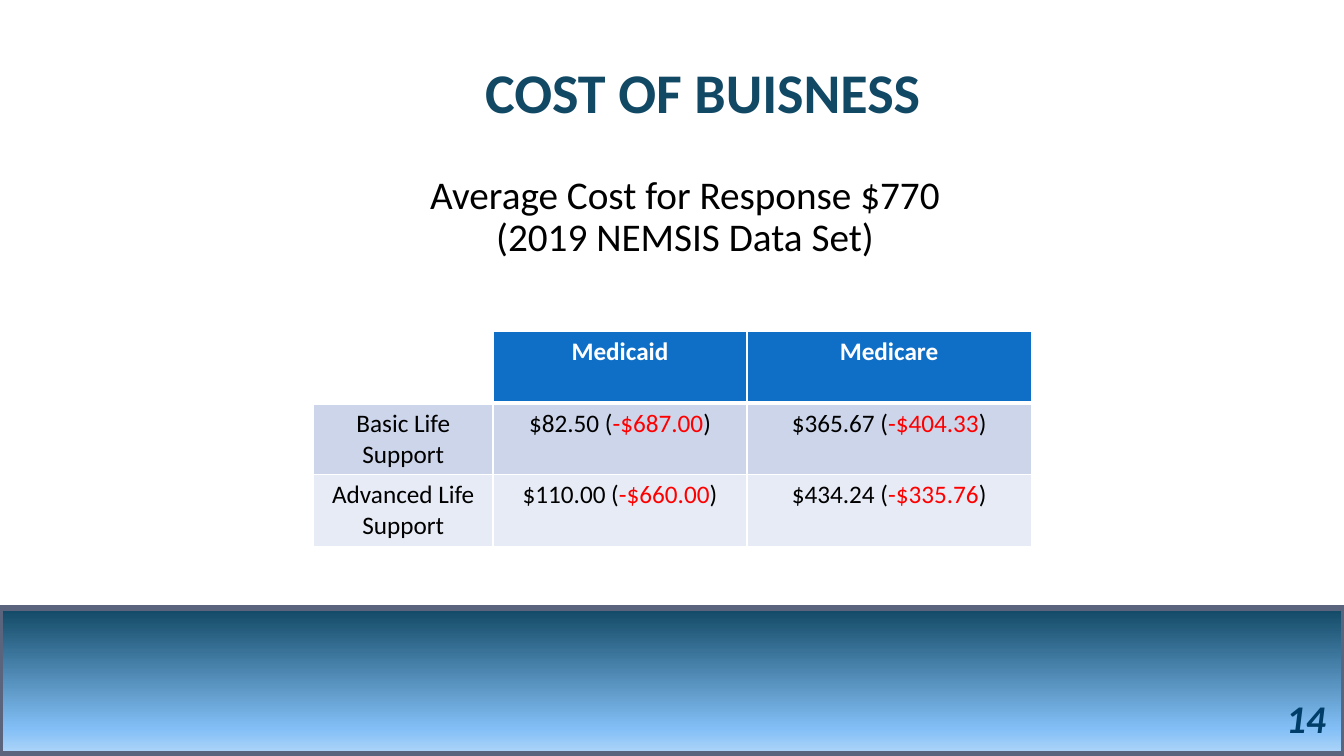
import pptx
import pptx.util
import pptx.dml.color
import pptx.enum.shapes
import pptx.enum.text
import pptx.oxml
import pptx.oxml.ns

RGB = pptx.dml.color.RGBColor
WHITE = RGB(0xFF, 0xFF, 0xFF)
BLACK = RGB(0, 0, 0)
RED = RGB(0xFF, 0, 0)
NAVY = RGB(0x11, 0x48, 0x64)
NUMBER_BLUE = RGB(0, 0x3D, 0x68)
HEADER_BLUE = RGB(0x0F, 0x6F, 0xC6)
BAND_EDGE = RGB(0x5A, 0x64, 0x7C)
SKY = RGB(0x83, 0xBF, 0xF6)
PALE_SKY = RGB(0xAC, 0xD4, 0xF9)
ROW_FILLS = [RGB(0xCC, 0xD5, 0xEA), RGB(0xE7, 0xEB, 0xF5)]

FONT = "Calibri"
SLIDE_WIDTH = pptx.util.Inches(13.333)
SLIDE_HEIGHT = pptx.util.Inches(7.5)
ALIGN = pptx.enum.text.PP_ALIGN
ANCHOR = pptx.enum.text.MSO_ANCHOR

BAND_STOPS = [(0, NAVY), (83, SKY), (99, PALE_SKY), (100, SKY)]
COLUMN_SHARES = [25, 35.4, 39.6]
HEADERS = ["", "Medicaid", "Medicare"]
COSTS = [
    ("Basic Life Support", ("$82.50", "-$687.00"), ("$365.67", "-$404.33")),
    ("Advanced Life Support", ("$110.00", "-$660.00"), ("$434.24", "-$335.76")),
]


def area(left, top, width, height):
    return (
        round(SLIDE_WIDTH * left / 100),
        round(SLIDE_HEIGHT * top / 100),
        round(SLIDE_WIDTH * width / 100),
        round(SLIDE_HEIGHT * height / 100),
    )


def write(frame, spans, size, align=ALIGN.CENTER, bold=False, italic=False):
    para = frame.paragraphs[0]
    para.alignment = align
    for text, color in spans:
        span = para.add_run()
        span.text = text
        font = span.font
        font.name = FONT
        font.size = pptx.util.Pt(size)
        font.bold = bold
        font.italic = italic
        font.color.rgb = color
    return para


def add_band(page, box):
    band = page.shapes.add_shape(pptx.enum.shapes.MSO_SHAPE.RECTANGLE, *box)
    band.shadow.inherit = False
    band.line.color.rgb = BAND_EDGE
    band.line.width = pptx.util.Pt(4.33)
    stops = "".join(
        f'<a:gs pos="{share * 1000}"><a:srgbClr val="{color}"/></a:gs>'
        for share, color in BAND_STOPS
    )
    gradient = pptx.oxml.parse_xml(
        f'<a:gradFill {pptx.oxml.ns.nsdecls("a")} rotWithShape="1">'
        f'<a:gsLst>{stops}</a:gsLst><a:lin ang="5400000" scaled="0"/></a:gradFill>'
    )
    band.element.spPr.find(pptx.oxml.ns.qn("a:prstGeom")).addnext(gradient)


def add_title(page, box):
    title = page.shapes.title
    title.left, title.top, title.width, title.height = box
    frame = title.text_frame
    frame.word_wrap = True
    frame.vertical_anchor = ANCHOR.MIDDLE
    para = write(frame, [("COST OF BUISNESS", NAVY)], 40, bold=True)
    para.line_spacing = 0.9


def add_text(page, box, text, color, size, anchor, **style):
    frame = page.shapes.add_textbox(*box).text_frame
    frame.word_wrap = True
    frame.vertical_anchor = anchor
    return write(frame, [(text, color)], size, **style)


def set_borders(cell, bottom):
    properties = cell._tc.get_or_add_tcPr()
    for side, points in (("L", 1), ("R", 1), ("T", 1), ("B", bottom)):
        properties.append(pptx.oxml.parse_xml(
            f'<a:ln{side} {pptx.oxml.ns.nsdecls("a")} w="{points * 12700}">'
            f'<a:solidFill><a:srgbClr val="{WHITE}"/></a:solidFill></a:ln{side}>'
        ))


def fill_cell(cell, spans, color, bold=False, bottom=1):
    set_borders(cell, bottom)
    if color is None:
        cell.fill.background()
    else:
        cell.fill.solid()
        cell.fill.fore_color.rgb = color
    write(cell.text_frame, spans, 18, bold=bold)


def add_cost_table(page, box):
    width, height = box[2:]
    row_count = len(COSTS) + 1
    table = page.shapes.add_table(row_count, len(HEADERS), *box).table
    for column, share in zip(table.columns, COLUMN_SHARES):
        column.width = round(width * share / 100)
    for row in table.rows:
        row.height = round(height / row_count)
    for index, header in enumerate(HEADERS):
        fill_cell(table.cell(0, index), [(header, WHITE)] if header else [],
                  HEADER_BLUE if header else None, bold=True, bottom=3)
    for row, ((service, *payments), color) in enumerate(zip(COSTS, ROW_FILLS), 1):
        fill_cell(table.cell(row, 0), [(service, BLACK)], color)
        for index, (paid, loss) in enumerate(payments, 1):
            spans = [(f"{paid} (", BLACK), (loss, RED), (")", BLACK)]
            fill_cell(table.cell(row, index), spans, color)


def add_cost_slide(deck):
    page = deck.slides.add_slide(deck.slide_layouts[5])
    page.background.fill.solid()
    page.background.fill.fore_color.rgb = WHITE
    add_band(page, area(0, 80.4, 100, 19.33))
    add_title(page, area(16.88, 5.33, 70.8, 14.53))
    summary = add_text(page, area(29.7, 22.53, 42.53, 17.33),
                       "Average Cost for Response $770 (2019 NEMSIS Data Set)",
                       BLACK, 28, ANCHOR.TOP)
    summary.line_spacing = 0.9
    add_cost_table(page, area(23.33, 43.87, 53.4, 28.4))
    add_text(page, area(76.35, 92.27, 23.03, 5.33), "14", NUMBER_BLUE, 28,
             ANCHOR.MIDDLE, align=ALIGN.RIGHT, bold=True, italic=True)


def main():
    deck = pptx.Presentation()
    deck.slide_width = SLIDE_WIDTH
    deck.slide_height = SLIDE_HEIGHT
    add_cost_slide(deck)
    deck.save("out.pptx")


if __name__ == "__main__":
    main()
